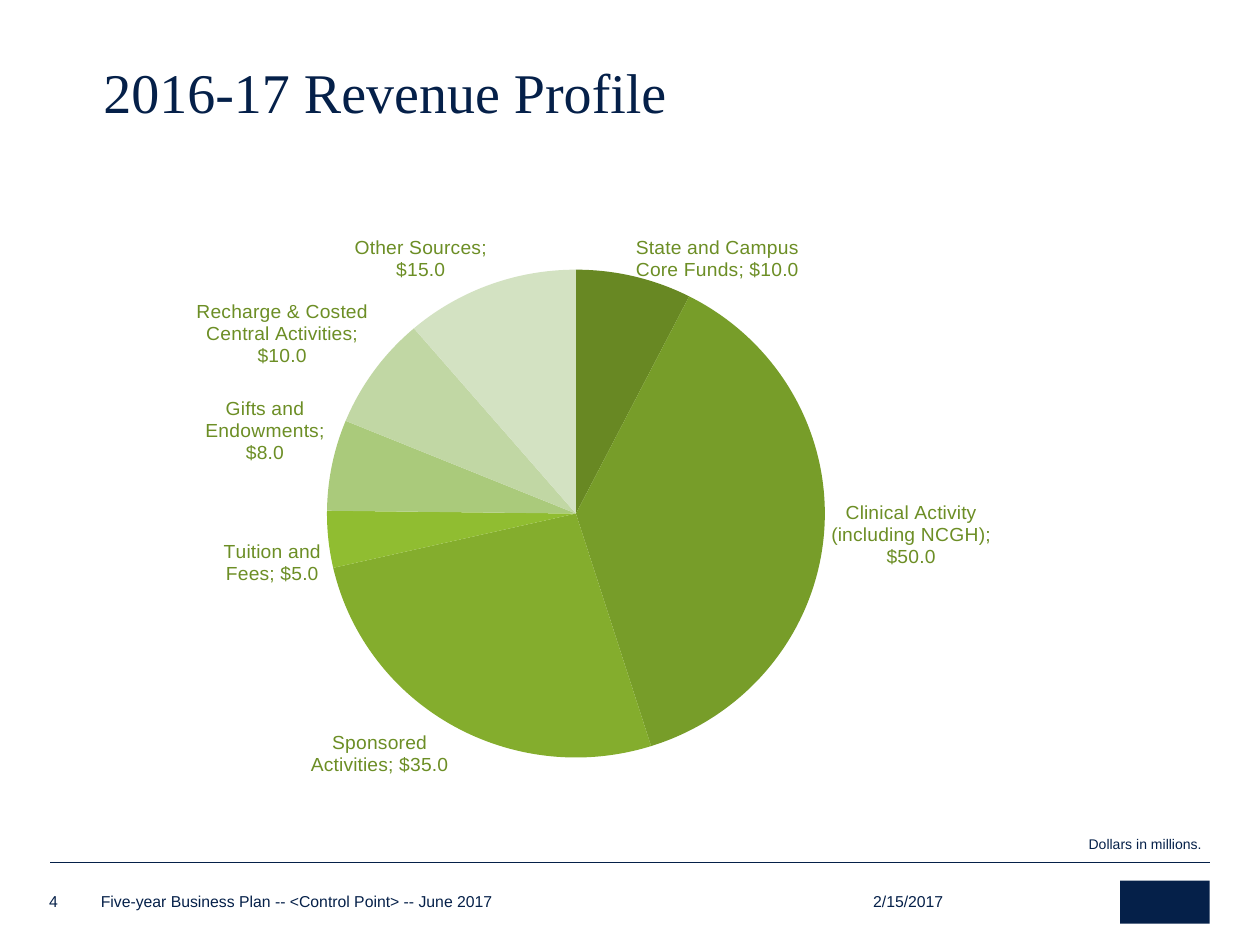
from lxml import etree
from pptx import Presentation
from pptx.chart.data import CategoryChartData
from pptx.dml.color import RGBColor
from pptx.enum.chart import XL_CHART_TYPE, XL_LABEL_POSITION
from pptx.enum.shapes import MSO_CONNECTOR, MSO_SHAPE
from pptx.enum.text import MSO_ANCHOR, PP_ALIGN
from pptx.oxml import parse_xml
from pptx.oxml.ns import nsdecls, qn
from pptx.util import Inches, Pt

PIE = XL_CHART_TYPE.PIE
OUTSIDE_END = XL_LABEL_POSITION.OUTSIDE_END
STRAIGHT = MSO_CONNECTOR.STRAIGHT
RECTANGLE = MSO_SHAPE.RECTANGLE
TOP, MIDDLE, BOTTOM = MSO_ANCHOR.TOP, MSO_ANCHOR.MIDDLE, MSO_ANCHOR.BOTTOM
LEFT = PP_ALIGN.LEFT

WIDTH, HEIGHT = 10, 7.5
MARGIN = 0.4
NAVY, LABEL_GREEN = "052049", "6C8E25"
SERIF, SANS = "Times New Roman", "Arial"

# Source of revenue, dollars in millions, slice colour
REVENUE = [
    ("State and Campus Core Funds", 10, "688823"),
    ("Clinical Activity (including NCGH)", 50, "779D29"),
    ("Sponsored Activities", 35, "84AD2D"),
    ("Tuition and Fees", 5, "90BD31"),
    ("Gifts and Endowments", 8, "AACA7B"),
    ("Recharge & Costed Central Activities", 10, "C1D7A4"),
    ("Other Sources", 15, "D3E2C2"),
]

# Text, left, top, width, height, size, anchor, line spacing
SMALL_TEXTS = [
    ("2/15/2017", 6.93, 7.06, 1.01, 0.17, 9, BOTTOM, 1),
    ("Five-year Business Plan -- <Control Point> -- June 2017",
     0.8, 7.08, 4.71, 0.15, 9, BOTTOM, 1),
    ("4", 0.39, 7.06, 0.27, 0.17, 9, BOTTOM, 1),
    ("Dollars in millions.", 8.64, 6.65, 1.66, 0.12, 8, TOP, 0.9),
]


def color(value):
    return RGBColor.from_string(value)


def style_font(font, name, size, value):
    font.name, font.size = name, Pt(size)
    font.bold = False
    font.color.rgb = color(value)


def write(box, text, name, size, anchor, spacing):
    frame = box.text_frame
    frame.text = text
    frame.word_wrap = True
    frame.vertical_anchor = anchor
    para = frame.paragraphs[0]
    para.alignment = LEFT
    para.line_spacing = spacing
    style_font(para.runs[0].font, name, size, NAVY)


def add_title(page, text):
    title = page.shapes.title
    title.left, title.top = Inches(0.72), Inches(0.48)
    title.width, title.height = Inches(8.84), Inches(0.57)
    write(title, text, SERIF, 32, MIDDLE, 0.85)


def add_small_text(page, text, left, top, width, height, size, anchor, spacing):
    box = page.shapes.add_textbox(
        Inches(left), Inches(top), Inches(width), Inches(height))
    frame = box.text_frame
    frame.margin_left = frame.margin_right = 0
    frame.margin_top = frame.margin_bottom = 0
    write(box, text, SANS, size, anchor, spacing)


def add_footer_rule(page, top):
    rule = page.shapes.add_connector(
        STRAIGHT, Inches(MARGIN), Inches(top), Inches(WIDTH - MARGIN), Inches(top))
    rule.line.color.rgb = color(NAVY)
    rule.line.width = Pt(0.25)
    etree.SubElement(rule.element.spPr, qn("a:effectLst"))


def add_emblem(page, width, height):
    emblem = page.shapes.add_shape(
        RECTANGLE, Inches(WIDTH - MARGIN - width), Inches(6.99),
        Inches(width), Inches(height))
    emblem.shadow.inherit = False
    emblem.fill.solid()
    emblem.fill.fore_color.rgb = color(NAVY)
    emblem.line.fill.background()


def place_plot(chart, left, top, width, height):
    """Fix the inner plot area, in shares of the chart."""
    area = chart.element.find(".//" + qn("c:plotArea"))
    for old in area.findall(qn("c:layout")):
        area.remove(old)
    area.insert(0, parse_xml(
        f'<c:layout {nsdecls("c")}><c:manualLayout>'
        '<c:layoutTarget val="inner"/><c:xMode val="edge"/><c:yMode val="edge"/>'
        f'<c:x val="{left}"/><c:y val="{top}"/><c:w val="{width}"/><c:h val="{height}"/>'
        '</c:manualLayout></c:layout>'))


def label_slices(plot):
    plot.has_data_labels = True
    labels = plot.data_labels
    labels.show_value = labels.show_category_name = True
    labels.show_percentage = False
    labels.number_format = '"$"#,##0.0'
    labels.number_format_is_linked = False
    labels.position = OUTSIDE_END
    style_font(labels.font, SANS, 11, LABEL_GREEN)
    separator = etree.Element(qn("c:separator"))
    separator.text = "; "
    parent = plot._element.find(qn("c:dLbls"))
    parent.find(qn("c:showBubbleSize")).addnext(separator)


def add_revenue_pie(page):
    names, amounts, fills = zip(*REVENUE)
    data = CategoryChartData(number_format='"$"#,##0.0')
    data.categories = names
    data.add_series("Series 1", amounts)
    chart = page.shapes.add_chart(
        PIE, Inches(1.12), Inches(1.79), Inches(7.19), Inches(4.44), data).chart
    chart.has_title = chart.has_legend = False
    style_font(chart.font, SERIF, 10, NAVY)
    place_plot(chart, 0.07, 0.06, 0.82, 0.89)
    plot = chart.plots[0]
    plot.vary_by_categories = True
    for index, value in enumerate(fills):
        look = plot.series[0].points[index].format
        look.fill.solid()
        look.fill.fore_color.rgb = color(value)
        look.line.fill.background()
    label_slices(plot)


def main():
    deck = Presentation()
    deck.slide_width, deck.slide_height = Inches(WIDTH), Inches(HEIGHT)
    page = deck.slides.add_slide(deck.slide_layouts[5])

    # Footer rule and emblem
    add_footer_rule(page, 6.84)
    add_emblem(page, 0.71, 0.34)

    # Title, chart, footer and note
    add_title(page, "2016-17 Revenue Profile")
    add_revenue_pie(page)
    for entry in SMALL_TEXTS:
        add_small_text(page, *entry)

    deck.save("out.pptx")


if __name__ == "__main__":
    main()
